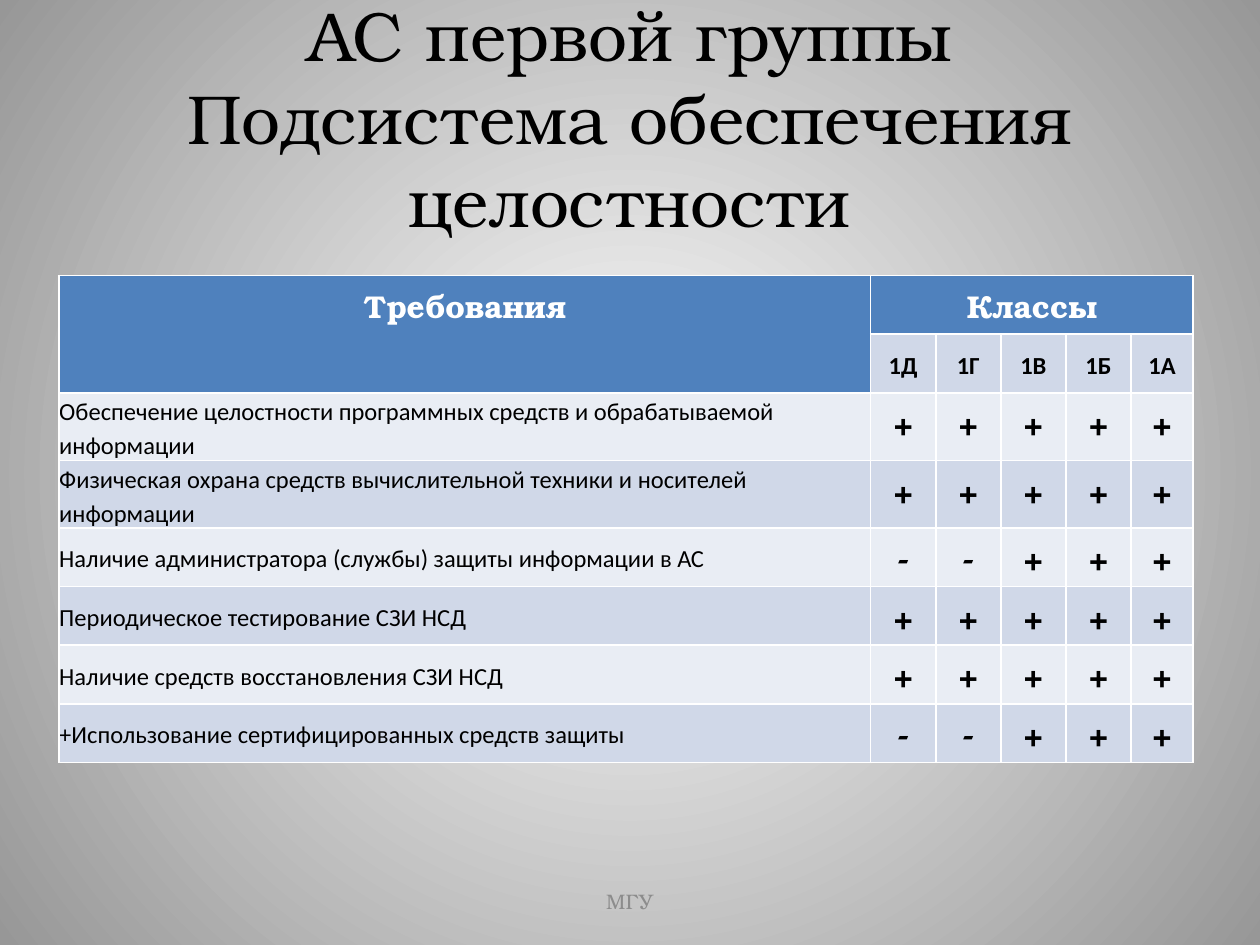
from dataclasses import dataclass

from lxml.etree import SubElement
from pptx import Presentation
from pptx.dml.color import RGBColor
from pptx.enum.text import MSO_ANCHOR, PP_ALIGN
from pptx.oxml.ns import qn
from pptx.util import Pt


@dataclass(frozen=True)
class Theme:
    serif: str = "TeX Gyre Bonum"
    sans: str = "Calibri"
    title_size: float = 39.6
    heading_size: float = 18
    body_size: float = 14
    footer_size: float = 12
    black: str = "000000"
    white: str = "FFFFFF"
    footer_gray: str = "8C8C8C"
    background_edge: str = "979797"
    header_fill: str = "4F81BD"
    band_fills: tuple[str, str] = ("D0D8E8", "E9EDF4")
    border_width: float = 1


THEME = Theme()


@dataclass(frozen=True)
class TextStyle:
    font: str
    size: float
    color: str = THEME.black
    bold: bool = False
    align: PP_ALIGN = PP_ALIGN.CENTER
    line_spacing: float | None = None


@dataclass(frozen=True)
class CellStyle:
    text: TextStyle
    compact: bool = False  # no margins, text in the middle


@dataclass(frozen=True)
class Requirement:
    name: str
    marks: str


TITLE_STYLE = TextStyle(THEME.serif, THEME.title_size)
FOOTER_STYLE = TextStyle(THEME.serif, THEME.footer_size, THEME.footer_gray)
HEADER_STYLE = CellStyle(TextStyle(THEME.serif, THEME.heading_size, THEME.white, bold=True))
MARK_STYLE = CellStyle(TextStyle(THEME.serif, THEME.heading_size, bold=True))
CLASS_STYLE = CellStyle(
    TextStyle(THEME.sans, THEME.body_size, bold=True, line_spacing=1.15), compact=True)
NAME_STYLE = CellStyle(
    TextStyle(THEME.sans, THEME.body_size, align=PP_ALIGN.LEFT, line_spacing=1.15), compact=True)

TITLE_LINES = ["АС первой группы", "Подсистема обеспечения целостности"]
CLASSES = ["1Д", "1Г", "1В", "1Б", "1А"]
REQUIREMENTS = [
    Requirement("Обеспечение целостности программных средств и обрабатываемой информации", "+++++"),
    Requirement("Физическая охрана средств вычислительной техники и носителей информации", "+++++"),
    Requirement("Наличие администратора (службы) защиты информации в АС", "--+++"),
    Requirement("Периодическое тестирование СЗИ НСД", "+++++"),
    Requirement("Наличие средств восстановления СЗИ НСД", "+++++"),
    Requirement("+Использование сертифицированных средств защиты", "--+++"),
]
COLUMN_WIDTHS = [463.7, 37.2, 37.2, 37.2, 37.2, 35.5]
ROW_HEIGHT = 33.5


def write_text(text_frame, lines: list[str], style: TextStyle) -> None:
    """Write one paragraph, with a line break between the lines."""
    paragraph = text_frame.paragraphs[0]
    paragraph.alignment = style.align
    if style.line_spacing:
        paragraph.line_spacing = style.line_spacing
    for index, line in enumerate(lines):
        if index:
            paragraph.add_line_break()
        run = paragraph.add_run()
        run.text = line
        run.font.name = style.font
        run.font.size = Pt(style.size)
        run.font.bold = style.bold
        run.font.color.rgb = RGBColor.from_string(style.color)


def add_text(slide, left: float, top: float, width: float, height: float,
             lines: list[str], style: TextStyle) -> None:
    shape = slide.shapes.add_textbox(Pt(left), Pt(top), Pt(width), Pt(height))
    shape.text_frame.word_wrap = True
    shape.text_frame.vertical_anchor = MSO_ANCHOR.MIDDLE
    write_text(shape.text_frame, lines, style)


def paint_background(slide) -> None:
    """Fill the background with a circular gradient, white in the centre."""
    fill = slide.background.fill
    fill.gradient()
    colors = (THEME.white, THEME.background_edge)
    for stop, position, color in zip(fill.gradient_stops, (0, 1), colors):
        stop.position = position
        stop.color.rgb = RGBColor.from_string(color)
    gradient = next(slide.element.iter(qn("a:gradFill")))
    for linear in gradient.findall(qn("a:lin")):
        gradient.remove(linear)
    circle = SubElement(gradient, qn("a:path"), path="circle")
    SubElement(circle, qn("a:fillToRect"), l="50000", t="50000", r="50000", b="50000")


def style_cell(cell, fill: str) -> None:
    """Set the borders, then the fill, in the order the schema asks for."""
    properties = cell._tc.get_or_add_tcPr()
    for side in "LRTB":
        line = SubElement(properties, qn(f"a:ln{side}"), w=str(Pt(THEME.border_width)))
        solid = SubElement(line, qn("a:solidFill"))
        SubElement(solid, qn("a:srgbClr"), val=THEME.white)
    cell.fill.solid()
    cell.fill.fore_color.rgb = RGBColor.from_string(fill)


def write_cell(cell, text: str, style: CellStyle) -> None:
    if style.compact:
        cell.margin_left = cell.margin_right = cell.margin_top = cell.margin_bottom = 0
        cell.vertical_anchor = MSO_ANCHOR.MIDDLE
    write_text(cell.text_frame, [text], style.text)


def add_requirements_table(slide) -> None:
    row_count, column_count = len(REQUIREMENTS) + 2, len(COLUMN_WIDTHS)
    table = slide.shapes.add_table(
        row_count, column_count, Pt(33.84), Pt(157.5),
        Pt(sum(COLUMN_WIDTHS)), Pt(ROW_HEIGHT * row_count)).table
    table.first_row = table.horz_banding = False
    for column, width in zip(table.columns, COLUMN_WIDTHS):
        column.width = Pt(width)
    for row_index, row in enumerate(table.rows):
        row.height = Pt(ROW_HEIGHT)
        for column_index, cell in enumerate(row.cells):
            is_header = row_index == 0 or (row_index == 1 and column_index == 0)
            band_fill = THEME.band_fills[(row_index + 1) % 2]
            style_cell(cell, THEME.header_fill if is_header else band_fill)

    table.cell(0, 0).merge(table.cell(1, 0))
    table.cell(0, 1).merge(table.cell(0, column_count - 1))
    write_cell(table.cell(0, 0), "Требования", HEADER_STYLE)
    write_cell(table.cell(0, 1), "Классы", HEADER_STYLE)
    for column_index, label in enumerate(CLASSES, start=1):
        write_cell(table.cell(1, column_index), label, CLASS_STYLE)
    for row_index, requirement in enumerate(REQUIREMENTS, start=2):
        write_cell(table.cell(row_index, 0), requirement.name, NAME_STYLE)
        for column_index, mark in enumerate(requirement.marks, start=1):
            write_cell(table.cell(row_index, column_index), mark, MARK_STYLE)


def main() -> None:
    presentation = Presentation()
    presentation.slide_width, presentation.slide_height = Pt(720), Pt(540)
    slide = presentation.slides.add_slide(presentation.slide_layouts[6])
    paint_background(slide)
    add_text(slide, 36, 21.6, 648, 90, TITLE_LINES, TITLE_STYLE)
    add_requirements_table(slide)
    add_text(slide, 246, 500.5, 228, 28.8, ["МГУ"], FOOTER_STYLE)
    presentation.save("out.pptx")


if __name__ == "__main__":
    main()
